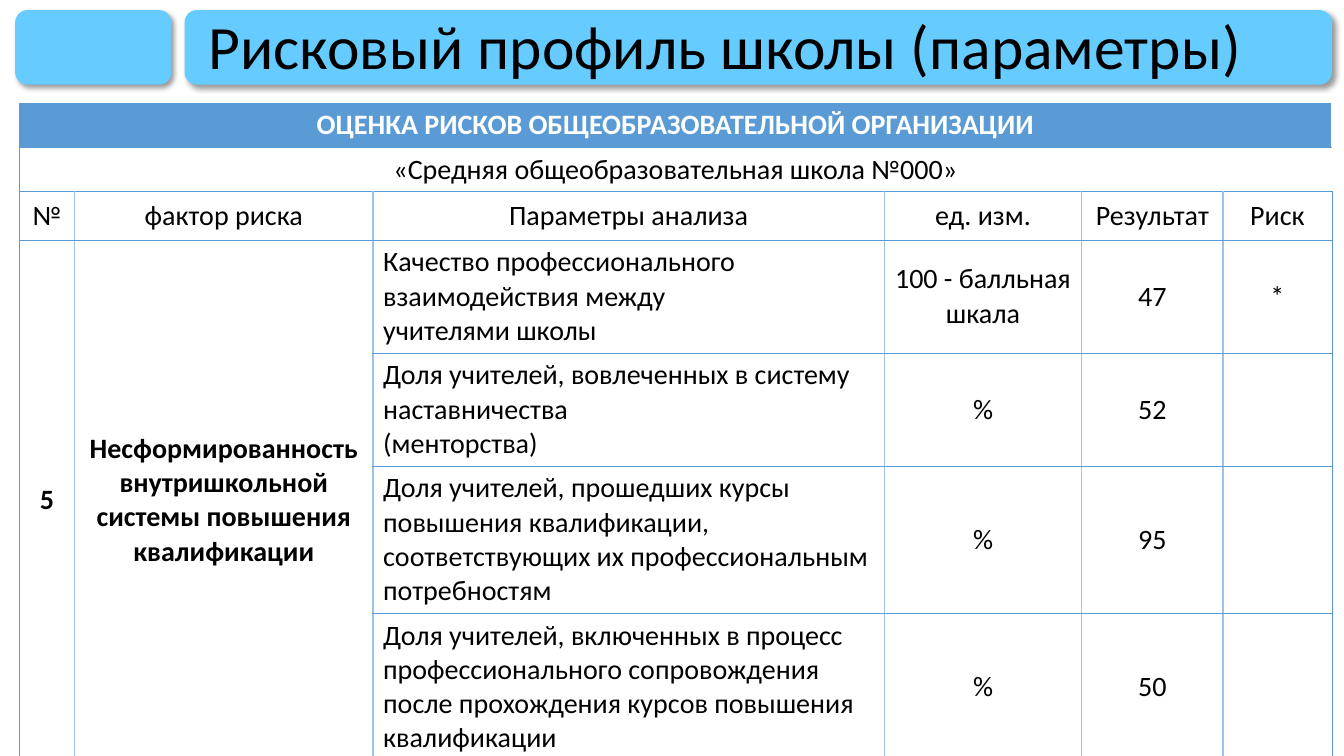
from pptx import Presentation, util as u
from pptx.dml.color import RGBColor
from pptx.enum import shapes, text
from pptx.oxml import parse_xml
from pptx.oxml.ns import nsdecls

BLACK = RGBColor(0x00, 0x00, 0x00)
WHITE = RGBColor(0xFF, 0xFF, 0xFF)
SKY = RGBColor(0x66, 0xCC, 0xFF)
BLUE = RGBColor(0x5B, 0x9B, 0xD5)
PALE = RGBColor(0x9D, 0xC3, 0xE6)

TITLE = "Рисковый профиль школы (параметры)"
BARS = [(0.15, 1.55), (1.83, 11.38)]  # left, width
COLS = [0.55, 2.96, 5.07, 1.96, 1.4, 1.08]
HEIGHTS = [0.43, 0.43, 0.48, 1.08, 1.08, 1.41, 1.41]
ROWS = [
    ["ОЦЕНКА РИСКОВ ОБЩЕОБРАЗОВАТЕЛЬНОЙ ОРГАНИЗАЦИИ"],
    ["«Средняя общеобразовательная школа №000»"],
    ["№", "фактор риска", "Параметры анализа", "ед. изм.", "Результат", "Риск"],
    ["5", "Несформированность внутришкольной системы повышения квалификации",
     "Качество профессионального взаимодействия между\nучителями школы",
     "100 - балльная шкала", "47", "*"],
    ["", "", "Доля учителей, вовлеченных в систему наставничества\n(менторства)",
     "%", "52", ""],
    ["", "", "Доля учителей, прошедших курсы повышения квалификации, "
     "соответствующих их профессиональным потребностям", "%", "95", ""],
    ["", "", "Доля учителей, включенных в процесс профессионального "
     "сопровождения после прохождения курсов повышения квалификации",
     "%", "50", ""],
]
HEAD = 2   # row of column names
FIRST = 3  # first row of values
LAST = len(ROWS) - 1
END = len(COLS) - 1


def write(frame, words, size=20, color=BLACK, bold=False,
          align=text.PP_ALIGN.CENTER, space=None):
    frame.text = words
    for para in frame.paragraphs:
        para.alignment = align
        para.line_spacing = space
        font = para.font
        font.name, font.size, font.bold = "Calibri", u.Pt(size), bold
        font.color.rgb = color


def add_bar(slide, left, width):
    bar = slide.shapes.add_shape(
        shapes.MSO_SHAPE.ROUNDED_RECTANGLE, u.Inches(left), u.Inches(0.1),
        u.Inches(width), u.Inches(0.74))
    bar.fill.solid()
    bar.fill.fore_color.rgb = SKY
    bar.line.fill.background()
    bar._element.spPr.append(parse_xml(
        f'<a:effectLst {nsdecls("a")}><a:outerShdw blurRad="{u.Pt(4)}" '
        f'dist="{u.Pt(3)}" dir="{45 * 60000}" algn="tl" rotWithShape="0">'
        '<a:srgbClr val="000000"><a:alpha val="40000"/></a:srgbClr>'
        '</a:outerShdw></a:effectLst>'))


def set_edges(cell, row, col):
    """Draw pale lines between columns and thin blue lines elsewhere."""
    thin, soft = (BLUE, 0.5), (PALE, 1)
    inner = soft if row >= HEAD else None
    merged = row >= FIRST and col < 2
    edges = {
        "L": thin if col == 0 else inner,
        "R": thin if col == END else inner,
        "T": None if merged and row > FIRST else thin,
        "B": None if merged and row < LAST else thin,
    }
    props = cell._tc.get_or_add_tcPr()
    lines = [(side, edge) for side, edge in edges.items() if edge]
    for spot, (side, (color, width)) in enumerate(lines):
        props.insert(spot, parse_xml(
            f'<a:ln{side} {nsdecls("a")} w="{u.Pt(width)}"><a:solidFill>'
            f'<a:srgbClr val="{color}"/></a:solidFill></a:ln{side}>'))


def add_grid(slide):
    grid = slide.shapes.add_table(
        len(ROWS), len(COLS), u.Inches(0.19), u.Inches(1.02),
        u.Inches(sum(COLS)), u.Inches(sum(HEIGHTS))).table
    grid.first_row = grid.horz_banding = False
    for col, width in enumerate(COLS):
        grid.columns[col].width = u.Inches(width)
    for row, height in enumerate(HEIGHTS):
        grid.rows[row].height = u.Inches(height)
        for col in range(len(COLS)):
            cell = grid.cell(row, col)
            words = ROWS[row][col] if col < len(ROWS[row]) else ""
            long = row >= FIRST and col == 2
            top = row == 0
            write(cell.text_frame, words, color=WHITE if top else BLACK,
                  bold=top or (row >= FIRST and col < 2),
                  align=text.PP_ALIGN.LEFT if long else text.PP_ALIGN.CENTER)
            cell.vertical_anchor = (text.MSO_ANCHOR.TOP if long
                                    else text.MSO_ANCHOR.MIDDLE)
            cell.fill.solid()
            cell.fill.fore_color.rgb = BLUE if top else WHITE
            set_edges(cell, row, col)
    for row in range(HEAD):
        grid.cell(row, 0).merge(grid.cell(row, END))
    for col in range(2):
        grid.cell(FIRST, col).merge(grid.cell(LAST, col))


def main():
    deck = Presentation()
    deck.slide_width, deck.slide_height = u.Inches(13.33), u.Inches(7.5)
    slide = deck.slides.add_slide(deck.slide_layouts[5])
    for left, width in BARS:
        add_bar(slide, left, width)

    title = slide.shapes.title
    title.left, title.top = u.Inches(1.97), u.Inches(0.16)
    title.width, title.height = u.Inches(11.1), u.Inches(0.66)
    write(title.text_frame, TITLE, size=44, align=text.PP_ALIGN.LEFT, space=0.9)
    title.text_frame.vertical_anchor = text.MSO_ANCHOR.MIDDLE
    title.text_frame.auto_size = text.MSO_AUTO_SIZE.NONE
    slide.shapes._spTree.append(title._element)  # bring in front of the bars

    add_grid(slide)
    deck.save("out.pptx")


if __name__ == "__main__":
    main()
